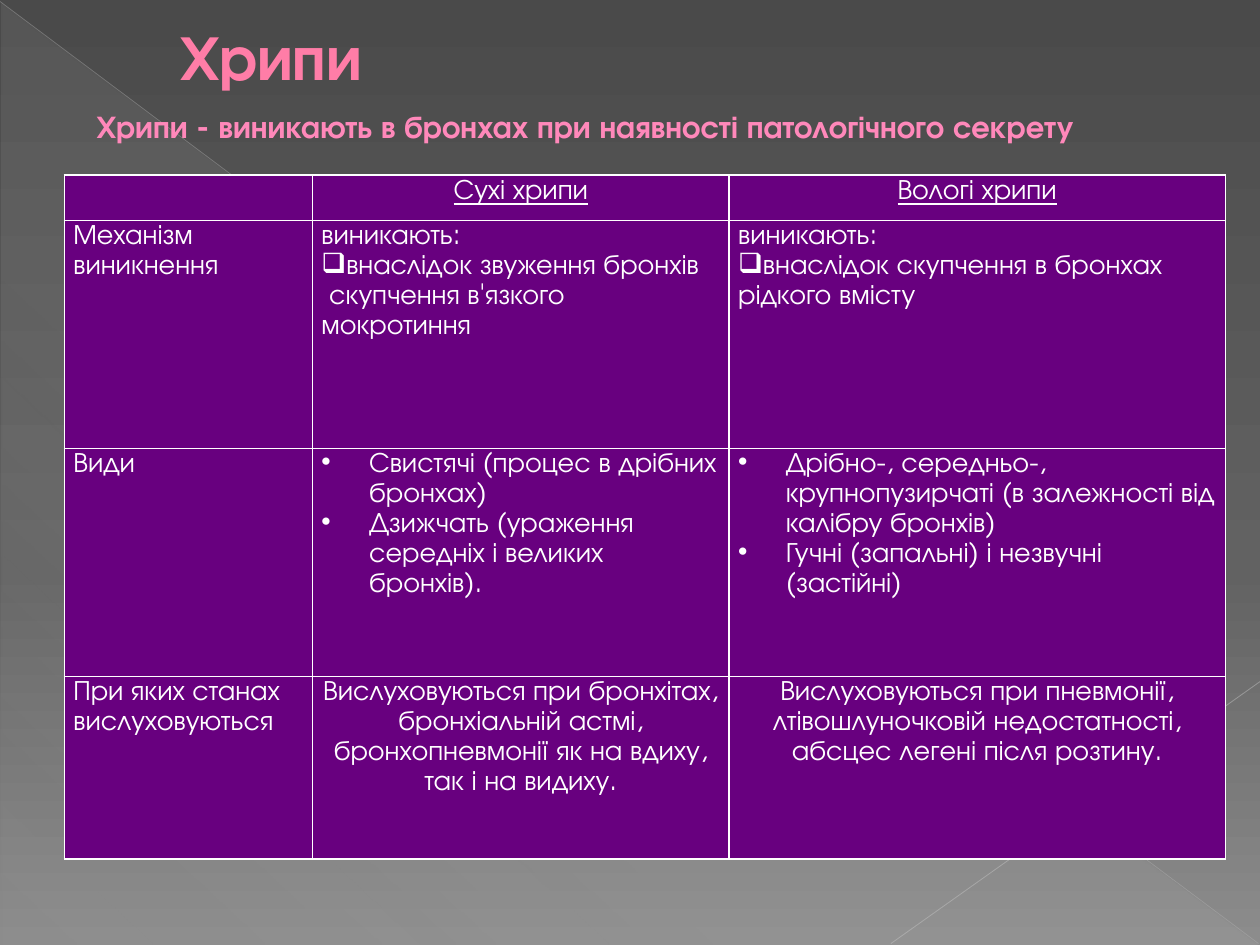
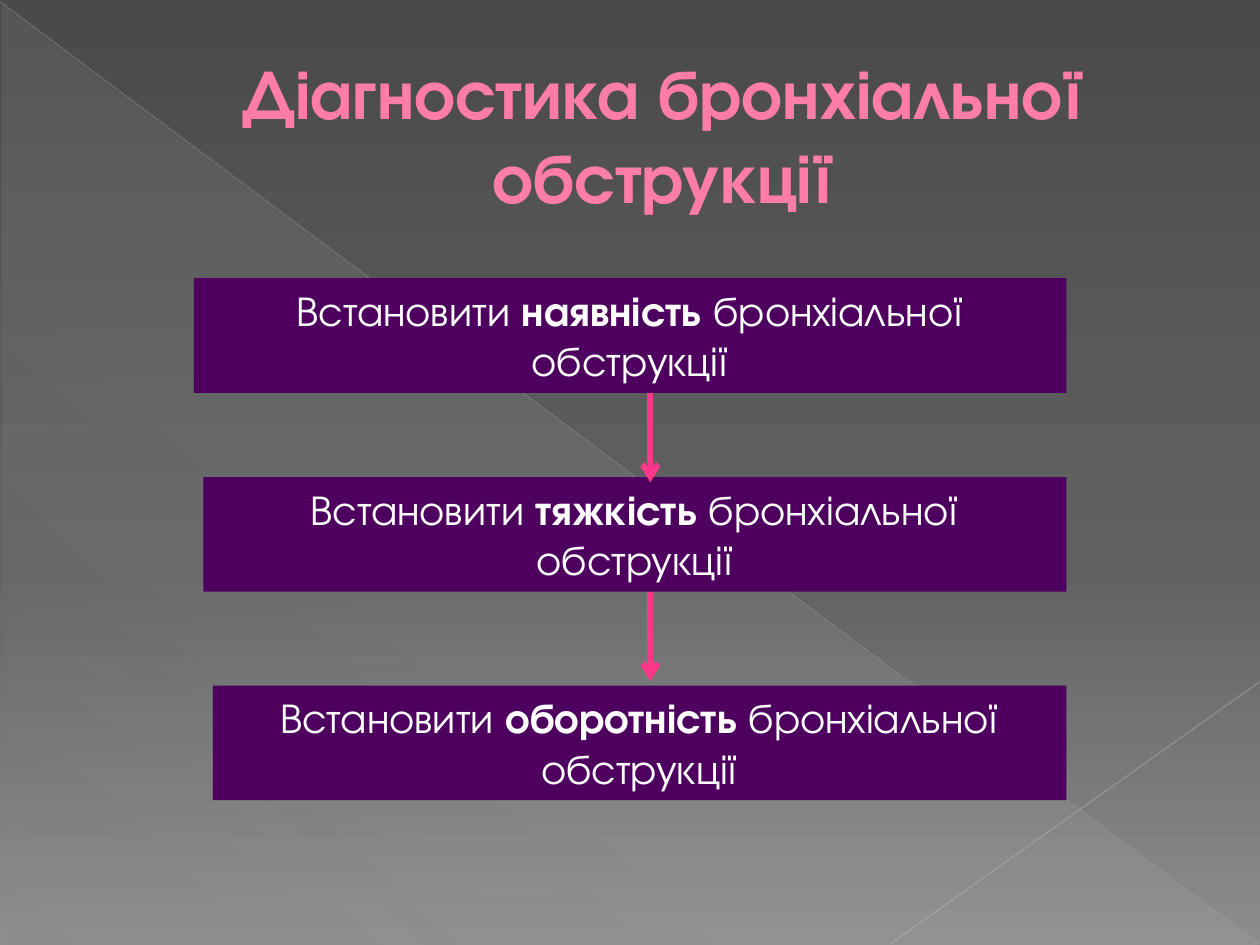
from dataclasses import dataclass

from lxml import etree
from pptx import Presentation
from pptx import util as u
from pptx.dml.color import RGBColor
from pptx.enum import shapes, text
from pptx.oxml import parse_xml
from pptx.oxml.ns import nsdecls, qn


@dataclass(frozen=True)
class Theme:
    font: str = "TeX Gyre Adventor"
    title: str = "FF7DA7"
    title_outline: str = "B12761"
    subtitle: str = "FF88BA"
    body: str = "FFFFFF"
    cell: str = "68007F"
    step: str = "4E005F"
    arrow: str = "FF388C"
    backdrop: tuple = ((0, "4A4A4A", 100), (60, "626262", 100), (100, "8C8C8C", 100))
    sheen: tuple = ((0, "D2D2D2", 10), (70, "D2D2D2", 8), (100, "D2D2D2", 1))
    table_size: int = 16
    subtitle_size: int = 18
    step_size: int = 24
    title_size: int = 36
    large_title_size: int = 40


theme = Theme()
CENTER = text.PP_ALIGN.CENTER


def write(frame, content, size, color=theme.body, bold=False, underline=False, align=None,
          spacing=None, bullet=None, indent=0, hanging=0, outline=None):
    """Add a paragraph; parts between asterisks are bold."""
    paragraph = frame.add_paragraph() if frame.text else frame.paragraphs[0]
    paragraph.alignment = align
    if spacing:
        paragraph.line_spacing = spacing
    properties = paragraph._p.get_or_add_pPr()
    properties.set("marL", str(u.Cm(indent)))
    properties.set("indent", str(-u.Cm(hanging)))
    if bullet:
        etree.SubElement(properties, qn("a:buChar"), char=bullet)
    if hanging:
        tabs = etree.SubElement(properties, qn("a:tabLst"))
        etree.SubElement(tabs, qn("a:tab"), pos=str(u.Cm(1.27)), algn="l")
    for number, part in enumerate(content.split("*")):
        run = paragraph.add_run()
        run.text = part
        font = run.font
        font.name, font.size = theme.font, u.Pt(size)
        font.bold, font.underline = bold or number % 2 == 1, underline
        font.color.rgb = RGBColor.from_string(color)
        if outline:
            run._r.rPr.insert(0, parse_xml(
                f'<a:ln {nsdecls("a")} w="6350"><a:solidFill><a:srgbClr val="{outline}"/>'
                '</a:solidFill></a:ln>'))


def set_gradient(fill, stops, angle):
    """Turn a fill into a linear gradient of (position, colour, opacity) stops."""
    fill.solid()
    fill.fore_color.rgb = RGBColor.from_string(stops[0][1])
    marks = "".join(
        f'<a:gs pos="{position * 1000}"><a:srgbClr val="{color}">'
        f'<a:alpha val="{opacity * 1000}"/></a:srgbClr></a:gs>'
        for position, color, opacity in stops)
    solid = fill._xPr.find(qn("a:solidFill"))
    fill._xPr.replace(solid, parse_xml(
        f'<a:gradFill {nsdecls("a")} rotWithShape="1"><a:gsLst>{marks}</a:gsLst>'
        f'<a:lin ang="{angle * 60000}" scaled="0"/></a:gradFill>'))


presentation = Presentation()
presentation.slide_width, presentation.slide_height = u.Cm(25.4), u.Cm(19.05)

# Backdrop and title of each slide: text, box, size, alignment
titles = [
    ("Хрипи", (2.03, -0.48, 22.86, 3.2), theme.title_size, None),
    ("Діагностика бронхіальної обструкції", (1.27, 0.74, 22.86, 3.89),
     theme.large_title_size, CENTER),
]
backdrop_lines = [
    ((0, 0.03, 25.37, 19.02), "BFBFBF", 0.39, 35),
    ((25.4, 13.74, 17.96, 19.02), "C6C6C6", 0.47, 45),
]
for title, box, size, align in titles:
    slide = presentation.slides.add_slide(presentation.slide_layouts[6])
    set_gradient(slide.background.fill, theme.backdrop, 90)
    triangle = slide.shapes.add_shape(
        shapes.MSO_SHAPE.RIGHT_TRIANGLE, u.Cm(0.03), u.Cm(0.05), u.Cm(25.35), u.Cm(19))
    triangle.shadow.inherit = False
    set_gradient(triangle.fill, theme.sheen, 133)
    triangle.line.fill.background()
    for ends, color, width, opacity in backdrop_lines:
        line = slide.shapes.add_connector(shapes.MSO_CONNECTOR.STRAIGHT, *map(u.Cm, ends))
        line.line.color.rgb = RGBColor.from_string(color)
        line.line.width = u.Pt(width)
        tint = line._element.spPr.find(".//" + qn("a:srgbClr"))
        etree.SubElement(tint, qn("a:alpha"), val=str(opacity * 1000))
        etree.SubElement(line._element.spPr, qn("a:effectLst"))
    frame = slide.shapes.add_textbox(*map(u.Cm, box)).text_frame
    frame.word_wrap = True
    frame.vertical_anchor = text.MSO_ANCHOR.MIDDLE
    write(frame, title, size, theme.title, bold=True, align=align, indent=1.35,
          outline=theme.title_outline)

rales_slide, diagnosis_slide = presentation.slides

# Definition under the first title
frame = rales_slide.shapes.add_textbox(*map(u.Cm, (1.7, 2.03, 22.61, 1.02))).text_frame
frame.word_wrap = True
write(frame, "Хрипи - виникають в бронхах при наявності патологічного секрету",
      theme.subtitle_size, theme.subtitle, bold=True)

# Comparison table: each cell lists (text, format) paragraphs
plain = {}
centered = {"align": CENTER}
heading = {"align": CENTER, "underline": True}
boxed = {"bullet": "❑"}
dotted = {"bullet": "•", "indent": 0.96, "hanging": 0.96}
rows = [
    [[], [("Сухі хрипи", heading)], [("Вологі хрипи", heading)]],
    [[("Механізм виникнення", plain)],
     [("виникають:", plain), ("внаслідок звуження бронхів", boxed),
      (" скупчення в'язкого мокротиння", plain)],
     [("виникають:", plain), ("внаслідок скупчення в бронхах рідкого вмісту", boxed)]],
    [[("Види", plain)],
     [("Свистячі (процес в дрібних бронхах)", dotted),
      ("Дзижчать (ураження середніх і великих бронхів).", dotted)],
     [("Дрібно-, середньо-, крупнопузирчаті (в залежності від калібру бронхів)", dotted),
      ("Гучні (запальні) і незвучні (застійні)", dotted)]],
    [[("При яких станах вислуховуються", plain)],
     [("Вислуховуються при бронхітах, бронхіальній астмі, бронхопневмонії "
       "як на вдиху, так і на видиху.", centered)],
     [("Вислуховуються при пневмонії, лтівошлуночковій недостатності, "
       "абсцес легені після розтину.", centered)]],
]
table = rales_slide.shapes.add_table(
    4, 3, u.Cm(1.3), u.Cm(3.53), u.Cm(23.4), u.Cm(13.79)).table
for column, width in zip(table.columns, (5, 8.4, 10)):
    column.width = u.Cm(width)
for row, height in zip(table.rows, (0.91, 4.6, 4.6, 3.68)):
    row.height = u.Cm(height)
for row, contents in zip(table.rows, rows):
    for cell, paragraphs in zip(row.cells, contents):
        cell.margin_left = cell.margin_right = u.Cm(0.18)
        cell.margin_top = cell.margin_bottom = 0
        for side in ("lnL", "lnR", "lnT", "lnB"):
            cell._tc.tcPr.append(parse_xml(
                f'<a:{side} {nsdecls("a")} w="12700"><a:solidFill>'
                f'<a:srgbClr val="{theme.body}"/></a:solidFill></a:{side}>'))
        cell.fill.solid()
        cell.fill.fore_color.rgb = RGBColor.from_string(theme.cell)
        for content, style in paragraphs:
            write(cell.text_frame, content, theme.table_size, spacing=1.15, **style)

# Diagnostic steps, each with an arrow to the next
step_right, step_height, arrow_x, arrow_length = 21.5, 2.31, 13.11, 1.8
steps = [("наявність", 5.61), ("тяжкість", 9.62), ("оборотність", 13.82)]
for number, (goal, top) in enumerate(steps):
    left = 3.91 + 0.19 * number
    step = diagnosis_slide.shapes.add_shape(
        shapes.MSO_SHAPE.RECTANGLE, u.Cm(left), u.Cm(top),
        u.Cm(step_right - left), u.Cm(step_height))
    step.shadow.inherit = False
    step.fill.solid()
    step.fill.fore_color.rgb = RGBColor.from_string(theme.step)
    step.line.fill.background()
    step.text_frame.word_wrap = True
    step.text_frame.vertical_anchor = text.MSO_ANCHOR.TOP
    write(step.text_frame, f"Встановити *{goal} *бронхіальної обструкції",
          theme.step_size, align=CENTER)
for goal, top in steps[:-1]:
    start = top + step_height
    arrow = diagnosis_slide.shapes.add_connector(
        shapes.MSO_CONNECTOR.STRAIGHT, u.Cm(arrow_x), u.Cm(start),
        u.Cm(arrow_x), u.Cm(start + arrow_length))
    arrow.line.color.rgb = RGBColor.from_string(theme.arrow)
    arrow.line.width = u.Pt(3.25)
    etree.SubElement(arrow.line._ln, qn("a:tailEnd"), type="arrow")
    etree.SubElement(arrow._element.spPr, qn("a:effectLst"))

presentation.save("out.pptx")
